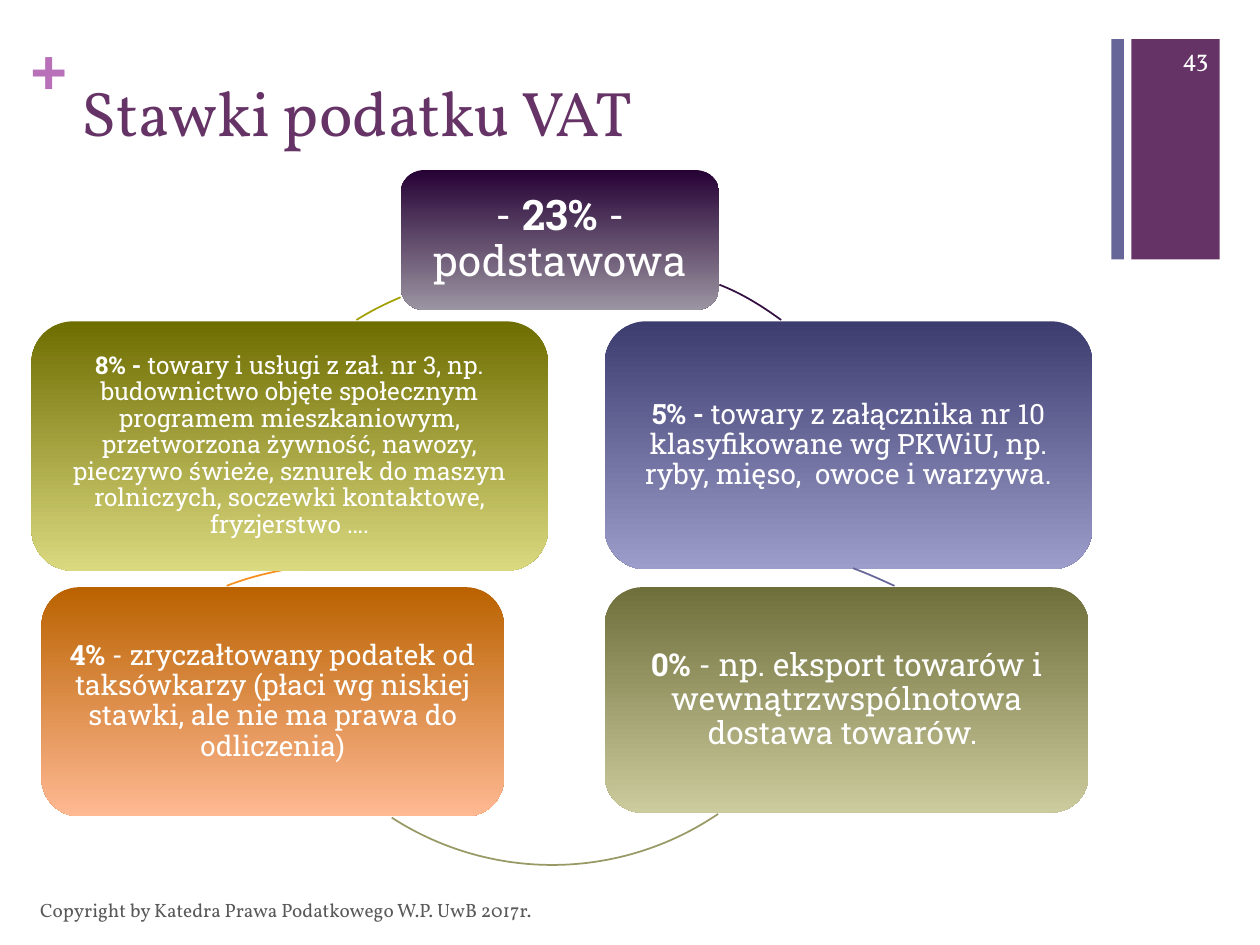
from dataclasses import dataclass

import lxml.etree
import pptx
import pptx.dml.color
import pptx.enum.shapes
import pptx.enum.text
import pptx.oxml.ns
import pptx.util
from pptx.util import Inches

HUES = {
    "plum": "663366", "slate": "666699", "pink": "B870B8",
    "gray": "595959", "white": "FFFFFF",
    "dusk": "260235", "mist": "9B94A1", "navy": "3C3C6F", "lilac": "9D9DCB",
    "moss": "6F6F3C", "sage": "CBCB9D", "rust": "BA6200", "peach": "FFB993",
    "olive": "6E6D00", "lime": "DBD980",
    "violet": "330F42", "khaki": "999966", "orange": "F7901E", "green": "A3A101",
}
ALIGN = pptx.enum.text.PP_ALIGN
ANCHOR = pptx.enum.text.MSO_ANCHOR
SHAPE = pptx.enum.shapes.MSO_SHAPE
SERIF, SLAB = "Vollkorn", "Roboto Slab"
RING = 4.67  # side of the square frame round each arc


@dataclass
class Rate:
    area: tuple[float, float, float, float]
    top: str
    base: str
    size: int
    inset: float
    runs: list[tuple[str, bool]]


@dataclass
class Arc:
    """A cubic curve (start, two control points, end) in a ring frame."""
    left: float
    top: float
    points: list[tuple[float, float]]
    hue: str


RATES = [
    Rate((3.18, 1.35, 2.53, 1.11), "dusk", "mist", 24, 0.1,
         [("- ", False), ("23%", True), (" - podstawowa", False)]),
    Rate((4.8, 2.55, 3.87, 1.97), "navy", "lilac", 16, 0.07,
         [("5% - ", True),
          ("towary z załącznika nr 10 klasyfikowane wg PKWiU, np. ryby, "
           "mięso,  owoce i warzywa.", False)]),
    Rate((4.8, 4.66, 3.84, 1.79), "moss", "sage", 18, 0.07,
         [("0%", True),
          (" - np. eksport towarów i wewnątrzwspólnotowa dostawa towarów. ", False)]),
    Rate((0.33, 4.66, 3.67, 1.82), "rust", "peach", 16, 0.07,
         [("4%", True),
          (" - zryczałtowany podatek od taksówkarzy (płaci wg niskiej stawki, "
           "ale nie ma prawa do odliczenia)", False)]),
    Rate((0.25, 2.55, 4.1, 1.98), "olive", "lime", 14, 0.06,
         [("8% - ", True),
          ("towary i usługi z zał. nr 3, np. budownictwo objęte społecznym "
           "programem mieszkaniowym, przetworzona żywność, nawozy, pieczywo "
           "świeże, sznurek do maszyn rolniczych, soczewki kontaktowe, "
           "fryzjerstwo ….", False)]),
]
ARCS = [
    Arc(2.46, 2.07, [(5.71, 2.26), (5.89, 2.33), (6.05, 2.43), (6.2, 2.54)], "violet"),
    Arc(3.68, 4.39, [(6.77, 4.51), (6.88, 4.55), (6.99, 4.6), (7.1, 4.65)], "slate"),
    Arc(2.05, 2.2, [(5.7, 6.46), (4.92, 6.99), (3.9, 7), (3.11, 6.49)], "khaki"),
    Arc(0.33, 4.49, [(1.8, 4.65), (1.95, 4.59), (2.11, 4.55), (2.27, 4.52)], "orange"),
    Arc(1.76, 2.17, [(2.83, 2.54), (2.94, 2.47), (3.06, 2.41), (3.18, 2.36)], "green"),
]


def color(hue: str) -> pptx.dml.color.RGBColor:
    return pptx.dml.color.RGBColor.from_string(HUES[hue])


def add_run(para, text: str, size: int, face: str, hue: str, bold: bool = False) -> None:
    run = para.add_run()
    run.text = text
    font = run.font
    font.size, font.name, font.bold = pptx.util.Pt(size), face, bold
    font.color.rgb = color(hue)


def set_inset(frame, inset: float) -> None:
    frame.margin_left = frame.margin_right = Inches(inset)
    frame.margin_top = frame.margin_bottom = Inches(inset)


def add_label(slide, area: tuple, text: str, size: int, face: str, hue: str,
              align=ALIGN.LEFT, bold: bool = False):
    frame = slide.shapes.add_textbox(*map(Inches, area)).text_frame
    frame.word_wrap = True
    frame.vertical_anchor = ANCHOR.MIDDLE
    para = frame.paragraphs[0]
    para.alignment = align
    add_run(para, text, size, face, hue, bold)
    return frame


def add_bar(slide, area: tuple, hue: str) -> None:
    bar = slide.shapes.add_shape(SHAPE.RECTANGLE, *map(Inches, area))
    bar.shadow.inherit = False
    bar.fill.solid()
    bar.fill.fore_color.rgb = color(hue)
    bar.line.fill.background()


def add_rate(slide, rate: Rate) -> None:
    box = slide.shapes.add_shape(SHAPE.ROUNDED_RECTANGLE, *map(Inches, rate.area))
    box.shadow.inherit = False
    box.line.fill.background()
    box.fill.gradient()
    box.fill.gradient_angle = 270
    for stop, hue, place in zip(box.fill.gradient_stops, (rate.top, rate.base), (0, 1)):
        stop.color.rgb = color(hue)
        stop.position = place
    frame = box.text_frame
    frame.word_wrap = True
    frame.vertical_anchor = ANCHOR.MIDDLE
    set_inset(frame, rate.inset)
    para = frame.paragraphs[0]
    para.alignment, para.line_spacing = ALIGN.CENTER, 0.9
    for text, bold in rate.runs:
        add_run(para, text, rate.size, SLAB, "white", bold)


def add_arc(slide, arc: Arc) -> None:
    """Frame the ring with a freeform, then make its outline one cubic curve."""
    qn, node = pptx.oxml.ns.qn, lxml.etree.SubElement
    pen = slide.shapes.build_freeform(Inches(arc.left), Inches(arc.top))
    pen.add_line_segments([(Inches(arc.left + RING), Inches(arc.top + RING))], close=False)
    curve = pen.convert_to_shape()
    curve.shadow.inherit = False
    curve.fill.background()
    curve.line.color.rgb = color(arc.hue)
    curve.line.width = pptx.util.Pt(1)

    trace = next(curve.element.iter(qn("a:path")))
    for step in list(trace):
        trace.remove(step)
    for tag, points in (("a:moveTo", arc.points[:1]), ("a:cubicBezTo", arc.points[1:])):
        step = node(trace, qn(tag))
        for x, y in points:
            node(step, qn("a:pt"), x=str(int(Inches(x - arc.left))),
                 y=str(int(Inches(y - arc.top))))


def add_title(slide, text: str) -> None:
    title = slide.shapes.title
    title.left, title.top, title.width, title.height = map(Inches, (0.55, 0.53, 8.26, 1.22))
    frame = title.text_frame
    frame.auto_size = pptx.enum.text.MSO_AUTO_SIZE.NONE
    frame.vertical_anchor = ANCHOR.TOP
    para = frame.paragraphs[0]
    para.alignment = ALIGN.LEFT
    add_run(para, text, 36, SERIF, "plum")


def main() -> None:
    deck = pptx.Presentation()
    deck.slide_width, deck.slide_height = Inches(10), Inches(7.5)
    slide = deck.slides.add_slide(deck.slide_layouts[5])

    add_bar(slide, (8.98, 0.31, 0.7, 1.75), "plum")
    add_bar(slide, (8.82, 0.31, 0.1, 1.75), "slate")
    plus = add_label(slide, (0.24, 0.25, 0.29, 0.61), "+", 36, "Arial", "pink", bold=True)
    plus.vertical_anchor = ANCHOR.TOP
    set_inset(plus, 0)
    add_title(slide, "Stawki podatku VAT")
    add_label(slide, (0.22, 7.02, 6.7, 0.4),
              "Copyright by Katedra Prawa Podatkowego W.P. UwB 2017r.", 11, SERIF, "gray")
    add_label(slide, (9.08, 0.26, 0.61, 0.4), "43", 14, SERIF, "white", ALIGN.RIGHT)

    for rate, arc in zip(RATES, ARCS):
        add_rate(slide, rate)
        add_arc(slide, arc)
    deck.save("out.pptx")


if __name__ == "__main__":
    main()
